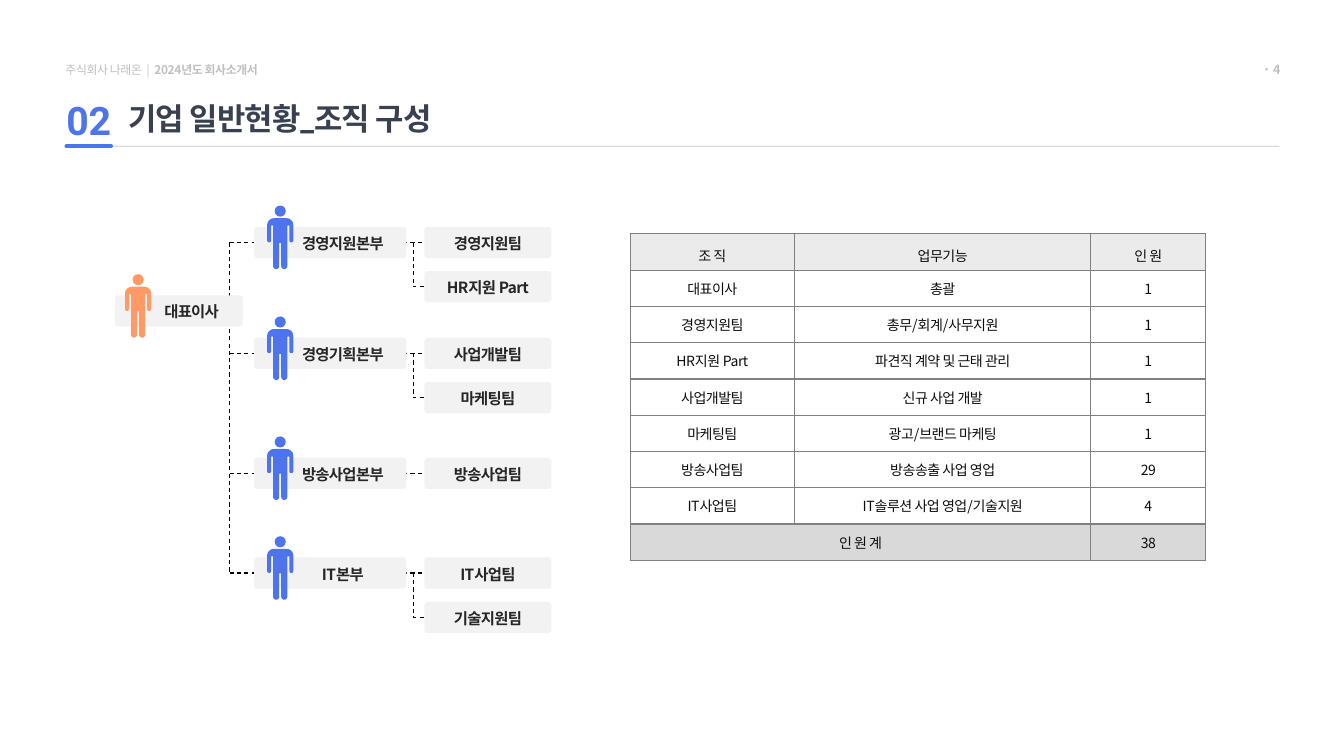
from dataclasses import dataclass
from math import cos, radians, sin

from lxml.etree import SubElement
from pptx import Presentation
from pptx.dml.color import RGBColor
from pptx.enum.dml import MSO_LINE
from pptx.enum.shapes import MSO_CONNECTOR as Link, MSO_SHAPE
from pptx.enum.text import MSO_ANCHOR as Anchor, PP_ALIGN as Align
from pptx.oxml import parse_xml
from pptx.oxml.ns import nsdecls, qn
from pptx.util import Inches, Pt


@dataclass(frozen=True)
class Theme:
    body_font: str = "Noto Sans CJK KR"
    title_font: str = "Roboto"
    blue: str = "4D74EB"
    orange: str = "FF9966"
    navy: str = "39404F"
    muted: str = "BFBFBF"
    divider: str = "D9D9D9"
    box: str = "F2F2F2"
    box_text: str = "262626"
    cell_text: str = "0D0D0D"
    border: str = "808080"
    black: str = "000000"
    header_size: float = 8.5
    page_size: float = 9
    cell_size: float = 10
    box_size: float = 11
    title_size: float = 22
    number_size: float = 28


THEME = Theme()
BOX_HEIGHT = 0.31
LEADER_LEFT, LEADER_WIDTH, LEADER_TOP = 1.14, 1.27, 2.93
DIVISION_LEFT, DIVISION_WIDTH = 2.52, 1.51
TEAM_LEFT, TEAM_WIDTH, TEAM_STEP = 4.21, 1.26, 0.44
TRUNK_X, BRANCH_X = 2.28, 4.1
DIVISIONS = [
    (2.25, "경영지원본부", ["경영지원팀", "HR지원 Part"]),
    (3.35, "경영기획본부", ["사업개발팀", "마케팅팀"]),
    (4.54, "방송사업본부", ["방송사업팀"]),
    (5.53, "IT본부", ["IT사업팀", "기술지원팀"]),
]
COLUMN_WIDTHS = [1.63, 2.94, 1.14]
ROW_HEIGHT = 0.36
STAFF = [
    ("조 직", "업무기능", "인 원"),
    ("대표이사", "총괄", "1"),
    ("경영지원팀", "총무/회계/사무지원", "1"),
    ("HR지원 Part", "파견직 계약 및 근태 관리", "1"),
    ("사업개발팀", "신규 사업 개발", "1"),
    ("마케팅팀", "광고/브랜드 마케팅", "1"),
    ("방송사업팀", "방송송출 사업 영업", "29"),
    ("IT사업팀", "IT솔루션 사업 영업/기술지원", "4"),
    ("인 원 계", "", "38"),
]


def add_run(paragraph, text, size, color, bold=False, font=THEME.body_font, spacing=0):
    """Add a run; spacing is in hundredths of a point."""
    run = paragraph.add_run()
    run.text = text
    run.font.size, run.font.bold, run.font.name = Pt(size), bold, font
    run.font.color.rgb = RGBColor.from_string(color)
    properties = run.font._element
    properties.set("spc", str(spacing))
    SubElement(properties, qn("a:ea")).set("typeface", THEME.body_font)


def set_alpha(fill_owner, percent):
    color = next(fill_owner.iter(qn("a:srgbClr")))
    SubElement(color, qn("a:alpha")).set("val", str(percent * 1000))


def set_margins(holder, left, top, right, bottom):
    holder.margin_left, holder.margin_top = Inches(left), Inches(top)
    holder.margin_right, holder.margin_bottom = Inches(right), Inches(bottom)


def paint(shape, color):
    shape.fill.solid()
    shape.fill.fore_color.rgb = RGBColor.from_string(color)
    shape.line.fill.background()
    shape.shadow.inherit = False


def add_label(slide, left, top, width, height, align=Align.LEFT):
    """Add a text box without margins and return its paragraph."""
    frame = slide.shapes.add_textbox(
        Inches(left), Inches(top), Inches(width), Inches(height)).text_frame
    frame.word_wrap = False
    frame.vertical_anchor = Anchor.MIDDLE
    set_margins(frame, 0, 0, 0, 0)
    frame.paragraphs[0].alignment = align
    return frame.paragraphs[0]


def add_line(slide, start, end, color=THEME.black, width=0.75, kind=Link.STRAIGHT):
    line = slide.shapes.add_connector(kind, *map(Inches, start + end))
    line.line.color.rgb = RGBColor.from_string(color)
    line.line.width = Pt(width)
    SubElement(line._element.spPr, qn("a:effectLst"))
    return line


def add_branch(slide, start, end):
    """Dashed elbow that goes down first, then across."""
    branch = add_line(slide, start, end, kind=Link.ELBOW)
    branch.line.dash_style = MSO_LINE.DASH
    guides = branch._element.spPr.find(qn("a:prstGeom")).get_or_add_avLst()
    guide = SubElement(guides, qn("a:gd"))
    guide.set("name", "adj1")
    guide.set("fmla", "val 0")


def add_box(slide, left, top, width, text, beside_person=False):
    box = slide.shapes.add_shape(MSO_SHAPE.ROUNDED_RECTANGLE, Inches(left), Inches(top),
                                 Inches(width), Inches(BOX_HEIGHT))
    box.adjustments[0] = 0.114
    paint(box, THEME.box)
    frame = box.text_frame
    frame.word_wrap = True
    frame.vertical_anchor = Anchor.MIDDLE
    set_margins(frame, 0.35 if beside_person else 0, 0.04, 0.1 if beside_person else 0, 0)
    paragraph = frame.paragraphs[0]
    paragraph.alignment, paragraph.line_spacing = Align.CENTER, 0.9
    add_run(paragraph, text, THEME.box_size, THEME.box_text, True, spacing=-50)
    return box


def arc(x, y, radius, start, end):
    steps = 12
    angles = [radians(start + (end - start) * i / steps) for i in range(steps + 1)]
    return [(x + radius * cos(a), y + radius * sin(a)) for a in angles]


def add_person(slide, left, top, color):
    """Draw a standing figure, measured in thousandths of an inch."""
    right_half = (arc(190, 195, 70, -90, 0) + arc(240, 345, 20, 0, 180)
                  + [(220, 200), (200, 200)] + arc(170, 600, 30, 0, 180) + [(140, 370)])
    left_half = [(260 - x, y) for x, y in reversed(right_half)]
    body = right_half + left_half
    head = arc(130, 55, 55, 0, 360)
    builder = slide.shapes.build_freeform(*body[0], scale=Inches(1) / 1000)
    builder.add_line_segments(body[1:], close=True)
    builder.move_to(*head[0])
    builder.add_line_segments(head[1:], close=True)
    paint(builder.convert_to_shape(Inches(left), Inches(top)), color)


def add_header(slide):
    rule = add_line(slide, (1.07, 1.45), (12.69, 1.45), THEME.navy, 0.5)
    set_alpha(rule.line._ln, 30)
    accent = add_line(slide, (0.66, 1.45), (1.1, 1.45), THEME.blue, 3)
    accent.line._ln.set("cap", "rnd")
    document = add_label(slide, 0.65, 0.57, 2.13, 0.24)
    for text, color, bold in [("주식회사 나래온  ", THEME.muted, False),
                              ("|  ", THEME.divider, True),
                              ("2024년도 회사소개서", THEME.muted, True)]:
        add_run(document, text, THEME.header_size, color, bold, spacing=-30)
    add_run(add_label(slide, 1.27, 0.89, 11.32, 0.57), "기업 일반현황_조직 구성",
            THEME.title_size, THEME.navy, True, THEME.title_font, -50)
    add_run(add_label(slide, 0.64, 0.9, 0.48, 0.57, Align.CENTER), "02",
            THEME.number_size, THEME.blue, True, THEME.title_font)
    page = add_label(slide, 11.19, 0.59, 1.51, 0.2, Align.RIGHT)
    add_run(page, "・", THEME.page_size, THEME.muted, spacing=-30)
    add_run(page, "4", THEME.page_size, THEME.muted, True, spacing=-30)


def add_organization(slide):
    middle = BOX_HEIGHT / 2
    trunk = add_line(slide, (TRUNK_X, DIVISIONS[0][0] + middle),
                     (TRUNK_X, DIVISIONS[-1][0] + middle))
    trunk.line.dash_style = MSO_LINE.DASH
    add_box(slide, LEADER_LEFT, LEADER_TOP, LEADER_WIDTH, "대표이사", True)
    add_person(slide, 1.24, LEADER_TOP - 0.21, THEME.orange)
    for top, division, teams in DIVISIONS:
        center = top + middle
        boxes = [add_box(slide, TEAM_LEFT, top + i * TEAM_STEP, TEAM_WIDTH, team)
                 for i, team in enumerate(teams)]
        link = add_line(slide, (TRUNK_X, center), (TEAM_LEFT, center))
        link.line.dash_style = MSO_LINE.DASH
        link.end_connect(boxes[0], 1)
        if len(teams) > 1:
            add_branch(slide, (BRANCH_X, center), (TEAM_LEFT, center + TEAM_STEP))
        add_box(slide, DIVISION_LEFT, top, DIVISION_WIDTH, division, True)
        add_person(slide, 2.65, top - 0.21, THEME.blue)


def style_cell(cell, text, is_header, is_total):
    cell.vertical_anchor = Anchor.MIDDLE
    set_margins(cell, 0, 0.04, 0, 0.04)
    paragraph = cell.text_frame.paragraphs[0]
    paragraph.alignment = Align.CENTER
    if is_header:
        paragraph.line_spacing = 1.3
    if text:
        add_run(paragraph, text, THEME.cell_size, THEME.cell_text, spacing=-30)
    properties = cell._tc.get_or_add_tcPr()
    for side in ("lnL", "lnR", "lnT", "lnB"):
        properties.append(parse_xml(
            f'<a:{side} {nsdecls("a")} w="{Pt(1)}"><a:solidFill>'
            f'<a:srgbClr val="{THEME.border}"/></a:solidFill></a:{side}>'))
    if is_header or is_total:
        cell.fill.solid()
        cell.fill.fore_color.rgb = RGBColor.from_string(THEME.divider)
        if is_header:
            set_alpha(properties.find(qn("a:solidFill")), 50)
    else:
        cell.fill.background()


def add_staff_table(slide):
    last = len(STAFF) - 1
    table = slide.shapes.add_table(
        len(STAFF), len(COLUMN_WIDTHS), Inches(6.25), Inches(2.32),
        Inches(sum(COLUMN_WIDTHS)), Inches(ROW_HEIGHT * len(STAFF))).table
    table.first_row = table.horz_banding = False
    for column, width in zip(table.columns, COLUMN_WIDTHS):
        column.width = Inches(width)
    for r, entries in enumerate(STAFF):
        for c, text in enumerate(entries):
            style_cell(table.cell(r, c), text, r == 0, r == last)
    table.cell(last, 0).merge(table.cell(last, 1))


def main():
    deck = Presentation()
    deck.slide_width, deck.slide_height = Inches(13.33), Inches(7.5)
    slide = deck.slides.add_slide(deck.slide_layouts[6])
    add_header(slide)
    add_organization(slide)
    add_staff_table(slide)
    deck.save("out.pptx")


if __name__ == "__main__":
    main()
